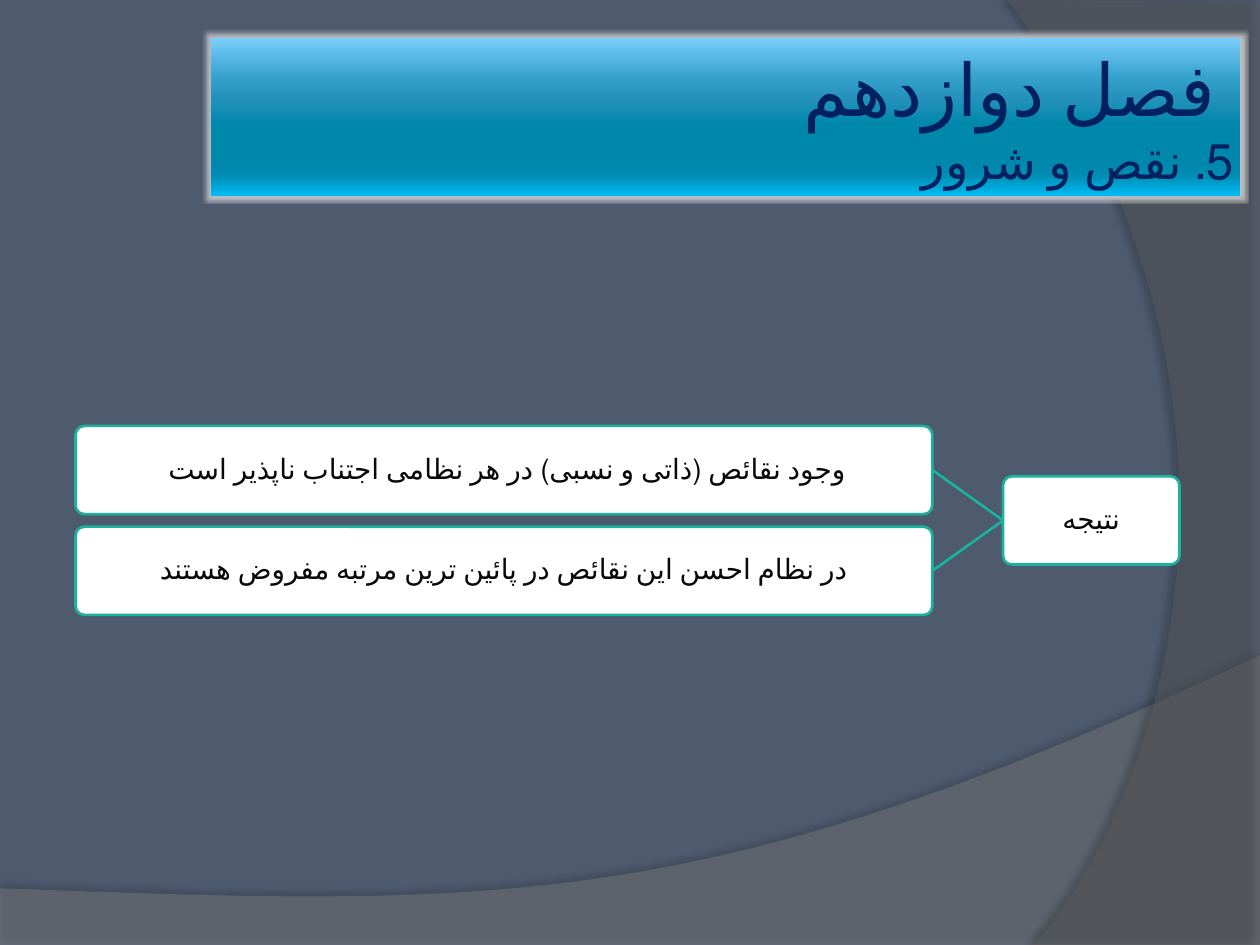
from typing import NamedTuple

from lxml.etree import SubElement
from pptx import Presentation
from pptx.dml.color import RGBColor
from pptx.enum.lang import MSO_LANGUAGE_ID as Language
from pptx.enum.shapes import MSO_CONNECTOR as Connector, MSO_SHAPE as Preset
from pptx.enum.text import MSO_ANCHOR as Anchor, PP_ALIGN as Align
from pptx.oxml.ns import qn
from pptx.util import Pt

FONT = "Arial"
NAVY, INK, TEAL, WHITE = "002060", "08090B", "1AB39F", "FFFFFF"
TITLE_STOPS = [(0, "7BCEFC"), (25, "35A2CD"), (38, "2592BD"), (55, "0087AC"),
               (80, "0086AB"), (88, "008EB4"), (100, "00BAF4")]


class Point(NamedTuple):
    x: float
    y: float


class Node(NamedTuple):
    text: str
    left: float
    top: float
    width: float
    height: float = 50.4

    @property
    def middle(self) -> float:
        return self.top + self.height / 2


class Band(NamedTuple):
    outline: list
    color: str
    opacity: int
    shadow_opacity: int
    shadow_distance: float
    shadow_angle: int


def rgb(color: str) -> RGBColor:
    return RGBColor.from_string(color)


def bezier(a: Point, b: Point, c: Point, d: Point, steps: int = 48) -> list:
    """Points along a cubic curve, both ends included."""
    points = []
    for step in range(steps + 1):
        t = step / steps
        weights = ((1 - t) ** 3, 3 * t * (1 - t) ** 2, 3 * t * t * (1 - t), t ** 3)
        points.append(Point(sum(w * p.x for w, p in zip(weights, (a, b, c, d))),
                            sum(w * p.y for w, p in zip(weights, (a, b, c, d)))))
    return points


def add_color(parent, color: str, opacity: int = 100):
    element = SubElement(parent, qn("a:srgbClr"), val=color)
    if opacity < 100:
        SubElement(element, qn("a:alpha"), val=str(opacity * 1000))


def add_effect(shape, kind: str, color: str, opacity: int, **attributes):
    shape.shadow.inherit = False
    effects = shape._element.spPr.find(qn("a:effectLst"))
    effect = SubElement(effects, qn(kind), {k: str(int(v)) for k, v in attributes.items()})
    add_color(effect, color, opacity)


def add_text(paragraph, text: str, *, size: float, color: str, align=Align.CENTER,
             spacing: float = 1.0):
    """Add one right-to-left Persian run to a paragraph."""
    paragraph.alignment = align
    paragraph.line_spacing = spacing
    paragraph._p.get_or_add_pPr().set("rtl", "1")
    run = paragraph.add_run()
    run.text = text
    run.font.size = Pt(size)
    run.font.name = FONT
    run.font.language_id = Language.FARSI
    run.font.color.rgb = rgb(color)


def prepare_frame(shape, inset: float):
    frame = shape.text_frame
    frame.word_wrap = True
    frame.vertical_anchor = Anchor.MIDDLE
    frame.margin_left = frame.margin_right = Pt(inset)
    frame.margin_top = frame.margin_bottom = Pt(inset)
    return frame.paragraphs[0]


def draw_band(slide, band: Band):
    start, *others = band.outline
    builder = slide.shapes.build_freeform(Pt(start.x), Pt(start.y), scale=1.0)
    builder.add_line_segments([(Pt(p.x), Pt(p.y)) for p in others], close=True)
    shape = builder.convert_to_shape()
    shape.fill.solid()
    shape.fill.fore_color.rgb = rgb(band.color)
    fill_color = shape._element.spPr.find(qn("a:solidFill"))[0]
    SubElement(fill_color, qn("a:alpha"), val=str(band.opacity * 1000))
    shape.line.fill.background()
    add_effect(shape, "a:outerShdw", "000000", band.shadow_opacity, blurRad=Pt(4),
               dist=Pt(band.shadow_distance), dir=band.shadow_angle * 60000)


def draw_title(slide, heading: str, subheading: str):
    shape = slide.shapes.add_shape(Preset.RECTANGLE, Pt(120.6), Pt(21.6), Pt(588), Pt(90))
    shape.fill.gradient()
    shape.fill.gradient_angle = 270
    stops = shape._element.spPr.find(qn("a:gradFill")).find(qn("a:gsLst"))
    stops.clear()
    for position, color in TITLE_STOPS:
        add_color(SubElement(stops, qn("a:gs"), pos=str(position * 1000)), color)
    shape.line.fill.background()
    add_effect(shape, "a:glow", "DCDCDC", 55, rad=Pt(2.5))
    paragraph = prepare_frame(shape, 3.6)
    add_text(paragraph, heading, size=41.4, color=NAVY, align=Align.RIGHT)
    paragraph.add_line_break()
    add_text(paragraph, subheading, size=27.9, color=NAVY, align=Align.RIGHT)


def draw_node(slide, node: Node):
    shape = slide.shapes.add_shape(Preset.ROUNDED_RECTANGLE, Pt(node.left), Pt(node.top),
                                   Pt(node.width), Pt(node.height))
    shape.adjustments[0] = 0.1
    shape.shadow.inherit = False
    shape.fill.solid()
    shape.fill.fore_color.rgb = rgb(WHITE)
    shape.line.color.rgb = rgb(TEAL)
    shape.line.width = Pt(1.5)
    add_text(prepare_frame(shape, 2), node.text, size=16, color=INK, spacing=0.9)


def draw_link(slide, root: Node, branch: Node):
    line = slide.shapes.add_connector(Connector.STRAIGHT, Pt(root.left), Pt(root.middle),
                                      Pt(branch.left + branch.width), Pt(branch.middle))
    line.line.color.rgb = rgb(TEAL)
    line.line.width = Pt(1.5)
    SubElement(line._element.spPr, qn("a:effectLst"))


def main():
    presentation = Presentation()
    presentation.slide_width, presentation.slide_height = Pt(720), Pt(540)
    slide = presentation.slides.add_slide(presentation.slide_layouts[6])
    slide.background.fill.solid()
    slide.background.fill.fore_color.rgb = rgb("4E5B6F")

    # Background bands
    bottom_curve = bezier(Point(720, 374.4), Point(402.5, 524.9),
                          Point(281.5, 517.7), Point(0, 507.6))
    side_curve = bezier(Point(591, 540), Point(673.2, 445.7),
                        Point(733, 216), Point(576, 0))
    draw_band(slide, Band([Point(0, 540.7), Point(720, 540.7), *bottom_curve],
                          "7F7F7F", 45, 35, 3.5, 270))
    draw_band(slide, Band([Point(720, 1.4), Point(720, 540), *side_curve],
                          "5E5E5E", 40, 45, 4, 180))

    # Title
    draw_title(slide, " فصل دوازدهم", "5. نقص و شرور")

    # Conclusion tree: the root is centred beside its branches
    first_top, pitch = 243.4, 57.6
    texts = ["وجود نقائص (ذاتی و نسبی) در هر نظامی اجتناب ناپذیر است ",
             "در نظام احسن این نقائص در پائین ترین مرتبه مفروض هستند"]
    branches = [Node(text, 43.2, first_top + i * pitch, 489.6)
                for i, text in enumerate(texts)]
    root = Node("نتیجه", 573.2, first_top + pitch * (len(texts) - 1) / 2, 100.8)
    draw_node(slide, root)
    for branch in branches:
        draw_link(slide, root, branch)
        draw_node(slide, branch)

    presentation.save("out.pptx")


if __name__ == "__main__":
    main()
